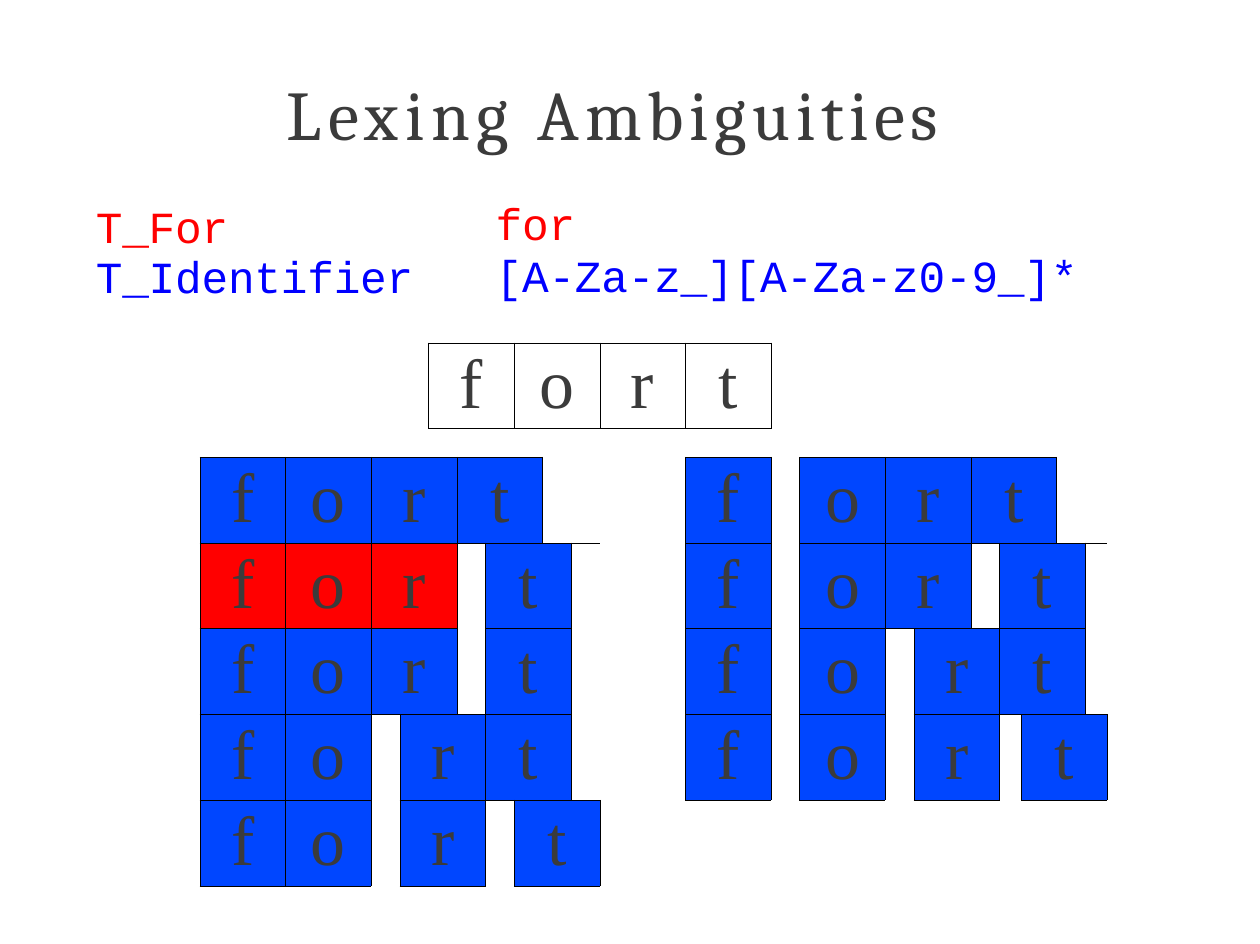
from itertools import groupby

from lxml.etree import SubElement
from pptx import Presentation
from pptx.dml.color import RGBColor
from pptx.enum.text import PP_ALIGN
from pptx.oxml.ns import qn
from pptx.util import Inches, Pt

GREY, RED, BLUE = "3B3B3B", "FF0000", "0000FF"
CELL_BLUE = "0046FF"


def color(hex_code):
    return RGBColor.from_string(hex_code)


def add_run(p, text, size, font, hex_code, spacing=0):
    r = p.add_run()
    r.text = text
    r.font.size = Pt(size)
    r.font.name = font
    r.font.color.rgb = color(hex_code)
    if spacing:
        r.font._element.set("spc", str(round(spacing * 100)))


prs = Presentation()
prs.slide_width, prs.slide_height = Inches(11.03), Inches(8.26)
s = prs.slides.add_slide(prs.slide_layouts[6])

# Title and token rules: box, top inset, line spacing, space before, font, size, paragraphs
texts = [
    ((2.5, 0.61, 6.01, 0.76), 0.01, None, 1, "Cambria", 44,
     [[("Lexing ", GREY, 4.2), ("Ambiguities", GREY, 3.6)]]),
    ((0.83, 1.72, 2.83, 0.93), 0.05, 31.7, 3.6, "Courier New", 28,
     [[("T_For ", RED, -0.1), ("T_Identifier", BLUE, -0.1)]]),
    ((4.33, 1.72, 5.16, 0.93), 0.01, 32.6, 1, "Courier New", 28,
     [[("for", RED, -0.1)], [("[A-Za-z_][A-Za-z0-9_]*", BLUE, -0.1)]]),
]
for box, inset, line, before, font, size, paragraphs in texts:
    tf = s.shapes.add_textbox(*[Inches(v) for v in box]).text_frame
    tf.word_wrap = True
    tf.margin_left = tf.margin_right = tf.margin_bottom = 0
    tf.margin_top = Inches(inset)
    for i, runs in enumerate(paragraphs):
        p = tf.add_paragraph() if i else tf.paragraphs[0]
        p._p.get_or_add_pPr().set("marL", str(Inches(0.01)))
        if line:
            p.line_spacing = Pt(line)
        if i == 0:
            p.space_before = Pt(before)
        for text, hex_code, spacing in runs:
            add_run(p, text, size, font, hex_code, spacing)

# Letter tables: one character per grid column, equal neighbours form one cell,
# a dot is a gap and capitals mark the keyword token
side = 0.75
tables = [
    (3.75, 3, [side] * 4, None, ["fort"]),
    (1.75, 4, [side, side, 0.25, 0.5] + [0.25] * 5, CELL_BLUE,
     ["forrttt..", "FORR.ttt.", "forr.ttt.", "fo.rrttt.", "fo.rr.ttt"]),
    (6, 4, [side], CELL_BLUE, ["f"] * 4),
    (7, 4, [side, 0.25, 0.5, 0.25, 0.19, 0.31, 0.25, 0.19], CELL_BLUE,
     ["orrttt..", "orr.ttt.", "o.rrttt.", "o.rr.ttt"]),
]
for left, top, widths, fill, rows in tables:
    table = s.shapes.add_table(len(rows), len(widths), Inches(left), Inches(top),
                               Inches(sum(widths)), Inches(side * len(rows))).table
    table.first_row = table.horz_banding = False
    # "No Style, No Grid"
    table._tbl.tblPr.find(qn("a:tableStyleId")).text = "{2D5ABB26-0587-4C30-8999-92F81FD0307C}"
    for column, width in zip(table.columns, widths):
        column.width = Inches(width)
    for row in table.rows:
        row.height = Inches(side)
    for cell in table.iter_cells():
        cell.margin_left = cell.margin_right = cell.margin_top = cell.margin_bottom = 0

    # Split each row into runs of equal characters: (character, first, last)
    spans = []
    for row in rows:
        groups = [[c for c, _ in g] for _, g in groupby(enumerate(row), lambda pair: pair[1])]
        spans.append([(row[g[0]], g[0], g[-1]) for g in groups])

    for i, row_spans in enumerate(spans):
        for span in row_spans:
            letter, first, last = span
            cell = table.cell(i, first)
            if cell.is_spanned:
                continue
            bottom = i
            while letter == "." and bottom + 1 < len(rows) and span in spans[bottom + 1]:
                bottom += 1
            if (bottom, last) != (i, first):
                cell.merge(table.cell(bottom, last))

            # Letters are framed; the gap that ends the first row is underlined
            sides = "LRTB" if letter != "." else "B" if i == 0 else ""
            tcPr = cell._tc.get_or_add_tcPr()
            for edge in sides:
                ln = SubElement(tcPr, qn(f"a:ln{edge}"), w=str(Pt(0.25)))
                SubElement(SubElement(ln, qn("a:solidFill")), qn("a:srgbClr"), val="000000")

            if letter == "." or not fill:
                cell.fill.background()
            else:
                cell.fill.solid()
                cell.fill.fore_color.rgb = color(RED if letter.isupper() else fill)
            if letter != ".":
                p = cell.text_frame.paragraphs[0]
                p.alignment = PP_ALIGN.CENTER
                p.line_spacing = Pt(50.6)
                add_run(p, letter.lower(), 44, "Times New Roman", GREY)

prs.save("out.pptx")
